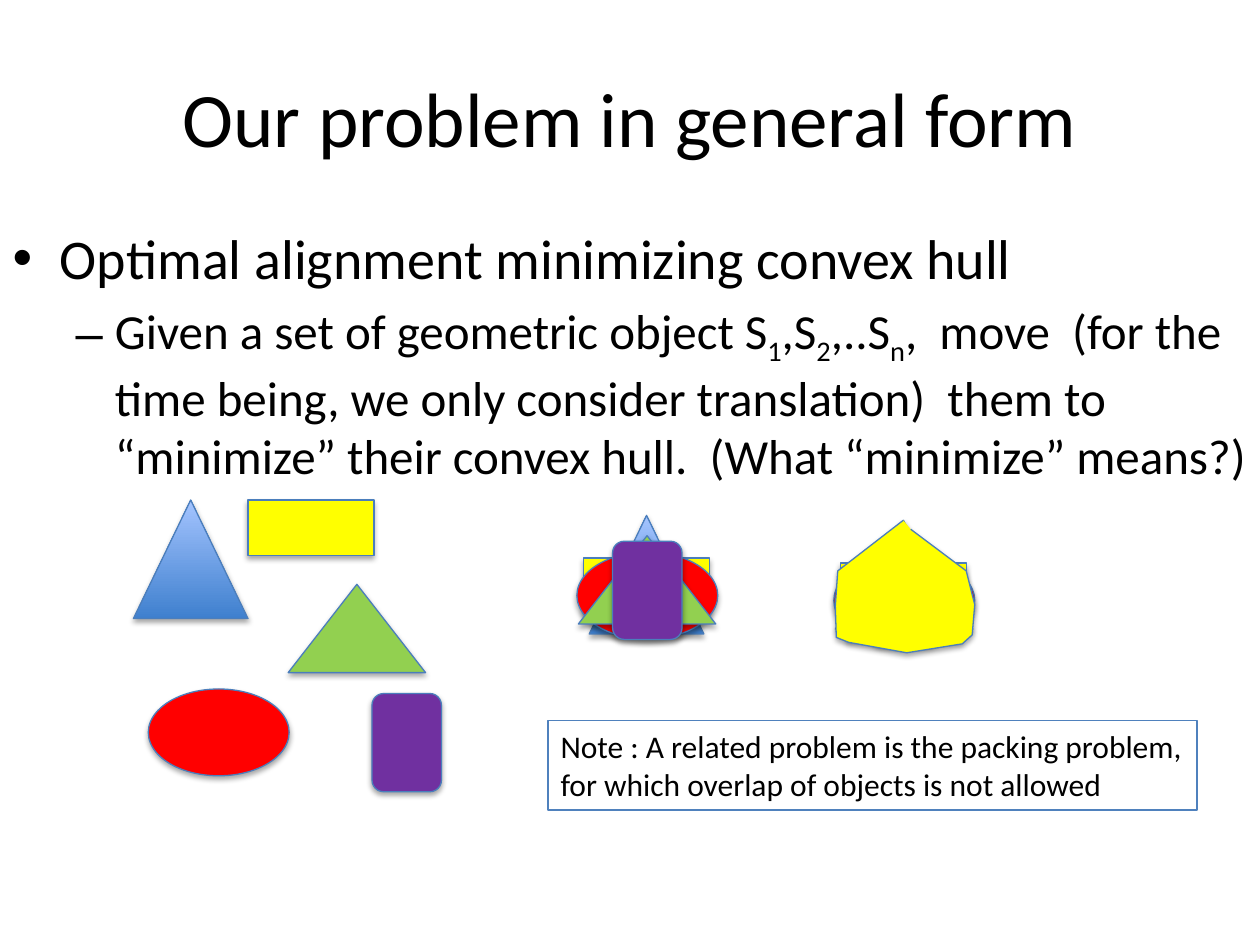
import pptx
import pptx.util
import pptx.dml.color
import pptx.enum.shapes
import pptx.enum.text
import pptx.oxml
import pptx.oxml.ns

Cm = pptx.util.Cm
Pt = pptx.util.Pt
KIND = pptx.enum.shapes.MSO_SHAPE
FIT = pptx.enum.text.MSO_AUTO_SIZE
ALIGN = pptx.enum.text.PP_ALIGN
ANCHOR = pptx.enum.text.MSO_ANCHOR

FORMS = [
    (KIND.ISOSCELES_TRIANGLE, 2.31, 2.39, ("3F80CE", "A4C4FF"), 0),
    (KIND.RECTANGLE, 2.54, 1.12, "FFFF00", 0),
    (KIND.OVAL, 2.84, 1.75, "FF0000", 0),
    (KIND.ISOSCELES_TRIANGLE, 2.77, 1.78, "92D050", 0),
    (KIND.ROUNDED_RECTANGLE, 1.98, 1.4, "7030A0", 270),
]
SPREAD = [(0, 0), (2.31, 0), (0.3, 3.81), (3.12, 1.7), (4.52, 4.19)]
STACK = [(0.25, 0), (0.13, 0.86), (0, 0.74), (0.03, 0.41), (0.43, 0.81)]
HULL = [(1.4, 0), (0.08, 1.02), (0.03, 1.73), (0.05, 2.36), (0.3, 2.46), (1.47, 2.67),
        (2.59, 2.49), (2.79, 2.31), (2.84, 1.7), (2.67, 1.02), (1.55, 0.18)]


def tint(code):
    """Turn a hex string into a colour."""
    return pptx.dml.color.RGBColor.from_string(code)


def place(shape, left, top, width, height):
    """Move and size a shape in centimetres."""
    shape.left, shape.top = Cm(left), Cm(top)
    shape.width, shape.height = Cm(width), Cm(height)


def write(para, text, size, color="000000", font="Calibri", align=None, level=0):
    """Fill a paragraph; parts between underscores become subscripts."""
    para.level = level
    para.alignment = align
    for pos, part in enumerate(text.split("_")):
        run = para.add_run()
        run.text = part
        run.font.size = Pt(size)
        run.font.name = font
        run.font.color.rgb = tint(color)
        if pos % 2:
            run.font._element.set("baseline", "-25000")


def shade(shape):
    """Give a shape a soft shadow below it."""
    shape.shadow.inherit = False
    effects = shape._element.spPr.find(pptx.oxml.ns.qn("a:effectLst"))
    effects.append(pptx.oxml.parse_xml(
        f'<a:outerShdw {pptx.oxml.ns.nsdecls("a")} blurRad="{Pt(3.1)}" dist="{Pt(1.8)}" '
        'dir="5400000" rotWithShape="0"><a:srgbClr val="000000">'
        '<a:alpha val="35000"/></a:srgbClr></a:outerShdw>'))


def paint(shape, fill):
    """Set fill, outline and shadow; a pair of colours makes a gradient."""
    if isinstance(fill, tuple):
        shape.fill.gradient()
        shape.fill.gradient_angle = 90
        for stop, code in zip(shape.fill.gradient_stops, fill):
            stop.color.rgb = tint(code)
    else:
        shape.fill.solid()
        shape.fill.fore_color.rgb = tint(fill)
    shape.line.color.rgb = tint("4B7EBC")
    shape.line.width = Pt(0.75)
    shade(shape)


def draw_forms(shapes, left, top, spots):
    """Draw the five objects at their spots in a box."""
    for (kind, width, height, fill, turn), (x, y) in zip(FORMS, spots):
        form = shapes.add_shape(kind, Cm(left + x), Cm(top + y), Cm(width), Cm(height))
        form.rotation = turn
        paint(form, fill)


def draw_hull(shapes, left, top):
    """Draw the convex hull outline in a box."""
    points = [(Cm(left + x), Cm(top + y)) for x, y in HULL]
    pen = shapes.build_freeform(*points[0])
    pen.add_line_segments(points[1:], close=False)
    paint(pen.convert_to_shape(), "FFFF00")


def draw_title(slide, *box):
    """Fill the title placeholder."""
    title = slide.shapes.title
    place(title, *box)
    title.text_frame.vertical_anchor = ANCHOR.MIDDLE
    write(title.text_frame.paragraphs[0], "Our problem in general form", 44, align=ALIGN.CENTER)


def draw_body(slide, *box):
    """Fill the body placeholder with the problem."""
    body = slide.placeholders[1]
    place(body, *box)
    frame = body.text_frame
    frame.auto_size = FIT.NONE
    write(frame.paragraphs[0], "Optimal alignment minimizing convex hull", 32)
    write(frame.add_paragraph(),
          "Given a set of geometric object S_1_,S_2_,..S_n_,  move  (for the time being, "
          "we only consider translation)  them to “minimize” their convex hull.  "
          "(What “minimize” means?)", 28, level=1)


def draw_note(slide, *box):
    """Draw the framed note."""
    note = slide.shapes.add_textbox(*map(Cm, box))
    note.line.color.rgb = tint("4F81BD")
    note.line.width = Pt(0.75)
    frame = note.text_frame
    frame.word_wrap = True
    frame.auto_size = FIT.SHAPE_TO_FIT_TEXT
    write(frame.paragraphs[0], "Note : A related problem is the packing problem, "
          "for which overlap of objects is not allowed", 18)


def main():
    """Build and save the slide."""
    deck = pptx.Presentation()
    deck.slide_width, deck.slide_height = Cm(25.4), Cm(19.05)
    slide = deck.slides.add_slide(deck.slide_layouts[1])
    draw_title(slide, 1.27, 0.76, 22.86, 3.18)
    draw_body(slide, 0, 4.37, 25.4, 12.57)
    draw_forms(slide.shapes, 2.69, 10.08, SPREAD)
    draw_forms(slide.shapes, 11.63, 10.39, STACK)
    draw_forms(slide.shapes.add_group_shape().shapes, 16.81, 10.49, STACK)
    draw_hull(slide.shapes, 16.81, 10.49)
    draw_note(slide, 11.05, 14.53, 13.08, 1.8)
    deck.save("out.pptx")


if __name__ == "__main__":
    main()
